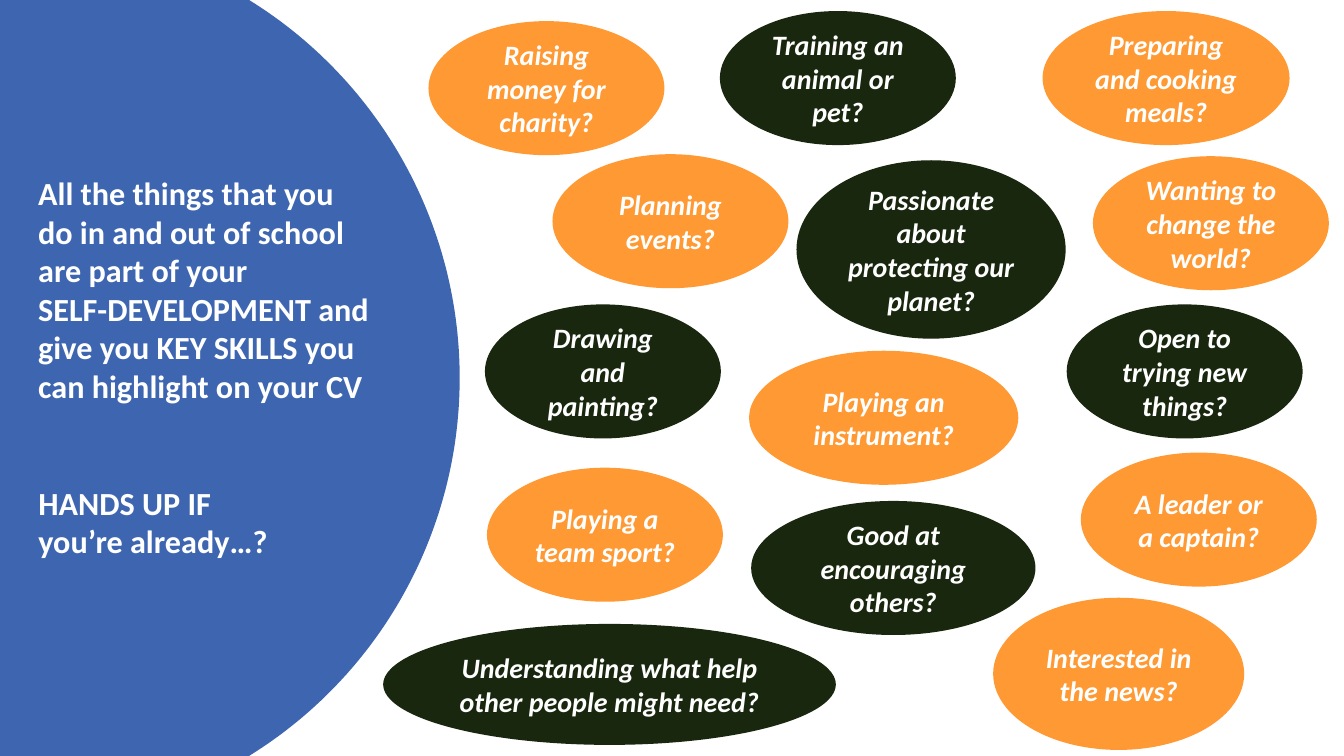
import math

from pptx import Presentation
from pptx.dml.color import RGBColor
from pptx.enum import shapes, text
from pptx.util import Inches, Pt

COLORS = {"blue": "3E66B0", "orange": "FF9933", "green": "19270F", "white": "FFFFFF"}
STATEMENT = [
    "All the things that you do in and out of school are part of your \v"
    "SELF-DEVELOPMENT and give you KEY SKILLS you can highlight on your CV"
]
QUESTION = ["HANDS UP IF", "you’re already…?"]

# Wording, fill, left, top, width, height
ACTIVITIES = [
    ("Raising money for charity?", "orange", 4.25, 0.21, 2.34, 1.33),
    ("Training an animal or pet?", "green", 7.14, 0.11, 2.34, 1.33),
    ("Preparing and cooking meals?", "orange", 10.34, 0.11, 2.45, 1.33),
    ("Wanting to change the world?", "orange", 10.84, 1.55, 2.34, 1.33),
    ("Passionate about protecting our planet?", "green", 7.9, 1.59, 2.67, 1.77),
    ("Planning events?", "orange", 5.48, 1.53, 2.34, 1.33),
    ("Drawing and painting?", "green", 4.81, 3.02, 2.34, 1.33),
    ("Playing an instrument?", "orange", 7.43, 3.48, 2.67, 1.33),
    ("Open to trying new things?", "green", 10.58, 3.02, 2.34, 1.33),
    ("A leader or a captain?", "orange", 10.72, 4.49, 2.34, 1.33),
    ("Playing a team sport?", "orange", 4.83, 4.64, 2.34, 1.33),
    ("Interested in the news?", "orange", 9.85, 5.93, 2.49, 1.51),
    ("Good at encouraging others?", "green", 7.45, 4.97, 2.82, 1.33),
    ("Understanding what help other people might need?", "green", 3.8, 6.19, 4.49, 1.2),
]
SLIDE_WIDTH, SLIDE_HEIGHT = 13.33, 7.5
ARC_CENTER_X, ARC_RADIUS, ARC_STEPS = 0.15, 4.41, 120

BODY = {"size": Pt(23), "bold": True, "italic": False, "name": "Calibri"}
BUBBLE = {"size": Pt(20), "bold": True, "italic": True, "name": "Calibri"}


def paint(shape, color):
    shape.fill.solid()
    shape.fill.fore_color.rgb = RGBColor.from_string(COLORS[color])
    shape.line.fill.background()
    shape.shadow.inherit = False


def write(shape, lines, font_format, alignment, anchor):
    frame = shape.text_frame
    frame.word_wrap = True
    frame.auto_size = text.MSO_AUTO_SIZE.NONE
    frame.vertical_anchor = anchor
    frame.text = "\n".join(lines)
    for paragraph in frame.paragraphs:
        paragraph.alignment = alignment
        paragraph.line_spacing = 1.0
        paragraph.space_before = Pt(0)
        for run in paragraph.runs:
            for name, value in font_format.items():
                setattr(run.font, name, value)
            run.font.color.rgb = RGBColor.from_string(COLORS["white"])


presentation = Presentation()
presentation.slide_width = Inches(SLIDE_WIDTH)
presentation.slide_height = Inches(SLIDE_HEIGHT)
slide = presentation.slides.add_slide(presentation.slide_layouts[5])

# Blue panel: a circle cut off by the slide's edges
middle = SLIDE_HEIGHT / 2
half_angle = math.asin(middle / ARC_RADIUS)
angles = [half_angle * (2 * step / ARC_STEPS - 1) for step in range(ARC_STEPS + 1)]
arc = [
    (Inches(ARC_CENTER_X + ARC_RADIUS * math.cos(angle)),
     Inches(middle + ARC_RADIUS * math.sin(angle)))
    for angle in angles
]
builder = slide.shapes.build_freeform(0, 0, scale=1.0)
builder.add_line_segments(arc + [(0, Inches(SLIDE_HEIGHT))], close=True)
paint(builder.convert_to_shape(), "blue")

# Statement and title question on the panel
statement = slide.shapes.add_textbox(Inches(0.28), Inches(1.67), Inches(3.52), Inches(2.5))
title = slide.shapes.title
slide.shapes._spTree.append(title._element)
title.left, title.top = Inches(0.28), Inches(4.74)
title.width, title.height = Inches(3.52), Inches(0.9)
for shape, lines in ((statement, STATEMENT), (title, QUESTION)):
    write(shape, lines, BODY, text.PP_ALIGN.LEFT, text.MSO_ANCHOR.TOP)

# Activity bubbles
for wording, color, *box in ACTIVITIES:
    bubble = slide.shapes.add_shape(shapes.MSO_SHAPE.OVAL, *map(Inches, box))
    paint(bubble, color)
    write(bubble, [wording], BUBBLE, text.PP_ALIGN.CENTER, text.MSO_ANCHOR.MIDDLE)

presentation.save("out.pptx")
